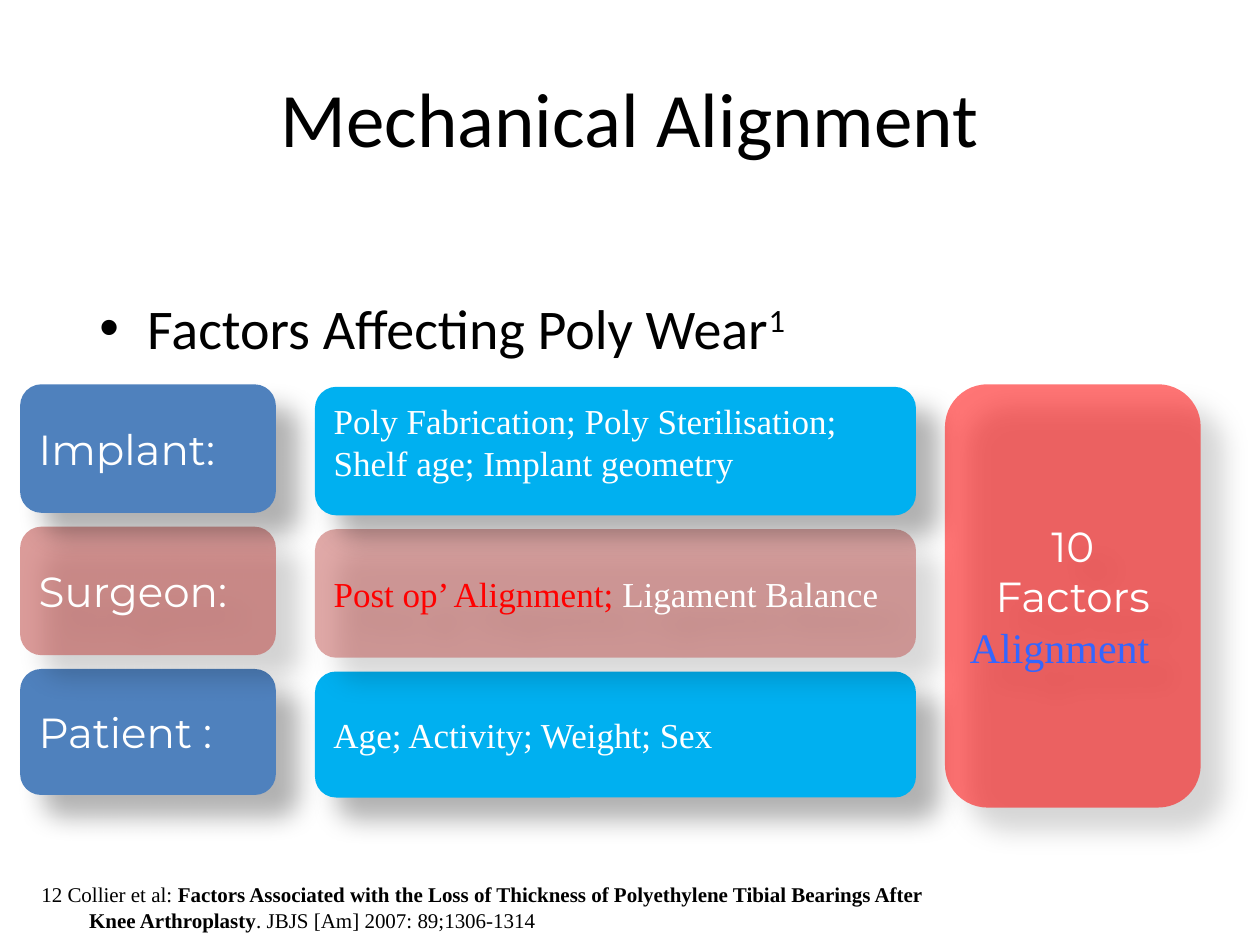
from lxml import etree
from pptx import Presentation
from pptx.dml.color import RGBColor
from pptx.enum.shapes import MSO_SHAPE
from pptx.enum.text import MSO_ANCHOR, MSO_AUTO_SIZE, PP_ALIGN
from pptx.oxml.ns import qn
from pptx.util import Inches, Pt

ROUNDED = MSO_SHAPE.ROUNDED_RECTANGLE
TOP, MIDDLE = MSO_ANCHOR.TOP, MSO_ANCHOR.MIDDLE
LEFT, CENTER = PP_ALIGN.LEFT, PP_ALIGN.CENTER
GROW = MSO_AUTO_SIZE.SHAPE_TO_FIT_TEXT
COLORS = {
    "black": "000000", "white": "FFFFFF", "blue": "4F81BD", "brick": "C0504D",
    "cyan": "00B0F0", "red": "FF0000", "link_blue": "3366FF",
}
TITLE = {"name": "Calibri", "size": Pt(44)}
BODY = {"name": "Calibri", "size": Pt(32)}
NOTE = {"name": "Times New Roman", "size": Pt(12)}
LABEL = {"name": "Montserrat", "size": Pt(24)}
DETAIL = {"name": "Times New Roman", "size": Pt(20)}
ACCENT = {"name": "Times New Roman", "size": Pt(24)}

ROW_TOP, ROW_PITCH = 3.05, 1.13
LABEL_LEFT, LABEL_WIDTH = 0.16, 2.03
DETAIL_LEFT, DETAIL_WIDTH, DETAIL_DROP = 2.5, 4.77, 0.02
ROWS = [
    ("Implant:", [("Poly Fabrication; Poly Sterilisation; Shelf age; Implant geometry", "white")],
     1.02, ("blue", 100), ("cyan", 100), TOP),
    ("Surgeon:", [("Post op’ Alignment; ", "red"), ("Ligament Balance", "white")],
     1.02, ("brick", 57), ("brick", 49), MIDDLE),
    ("Patient :", [("Age; Activity; Weight; Sex", "white")],
     1, ("blue", 100), ("cyan", 100), MIDDLE),
]


def add_span(para, text, style, color="black"):
    span = para.add_run()
    span.text = text
    for name, value in style.items():
        setattr(span.font, name, value)
    span.font.color.rgb = RGBColor.from_string(COLORS[color])
    return span


def set_frame(shape, anchor):
    frame = shape.text_frame
    frame.word_wrap = True
    frame.vertical_anchor = anchor
    return frame


def add_text(page, area, anchor=TOP):
    box = page.shapes.add_textbox(*map(Inches, area))
    return set_frame(box, anchor)


def set_hanging(para, bullet=None):
    properties = para._p.get_or_add_pPr()
    properties.set("marL", str(Inches(0.38)))
    properties.set("indent", str(Inches(-0.38)))
    if bullet:
        font = etree.SubElement(properties, qn("a:buFont"))
        font.set("typeface", "Arial")
        etree.SubElement(properties, qn("a:buChar")).set("char", bullet)


def set_alpha(color, percent):
    etree.SubElement(color, qn("a:alpha")).set("val", str(percent * 1000))


def add_shadow(shape):
    shape.shadow.inherit = False
    effects = shape._element.spPr.find(qn("a:effectLst"))
    shadow = etree.SubElement(effects, qn("a:outerShdw"))
    values = {"blurRad": Pt(15), "dist": Pt(18), "dir": 45 * 60000,
              "algn": "tl", "rotWithShape": 0}
    for name, value in values.items():
        shadow.set(name, str(value))
    color = etree.SubElement(shadow, qn("a:srgbClr"))
    color.set("val", COLORS["black"])
    set_alpha(color, 30)


def add_card(page, area, fill, anchor=MIDDLE):
    card = page.shapes.add_shape(ROUNDED, *map(Inches, area))
    color, opacity = fill
    card.fill.solid()
    card.fill.fore_color.rgb = RGBColor.from_string(COLORS[color])
    if opacity < 100:
        set_alpha(card._element.spPr.find(qn("a:solidFill"))[0], opacity)
    card.line.fill.background()
    add_shadow(card)
    frame = set_frame(card, anchor)
    frame.paragraphs[0].alignment = LEFT
    return frame


def add_headings(page):
    title = add_text(page, (0.5, 0.3, 9, 1.25), MIDDLE).paragraphs[0]
    title.alignment = CENTER
    add_span(title, "Mechanical Alignment", TITLE)
    body = add_text(page, (0.69, 2.28, 8.79, 4.59)).paragraphs[0]
    set_hanging(body, "•")
    add_span(body, "Factors Affecting Poly Wear", BODY)
    mark = add_span(body, "1", BODY)
    mark._r.get_or_add_rPr().set("baseline", "30000")


def add_reference(page):
    frame = add_text(page, (0.23, 6.95, 7.5, 0.71))
    frame.auto_size = GROW
    para = frame.paragraphs[0]
    set_hanging(para)
    add_span(para, "12 Collier et al: ", NOTE)
    add_span(para, "Factors Associated with the Loss of Thickness of Polyethylene "
             "Tibial Bearings After Knee Arthroplasty", {**NOTE, "bold": True})
    add_span(para, ". JBJS [Am] 2007: 89;1306-1314", NOTE)


def add_factor_rows(page):
    for index, (label, details, height, label_fill, detail_fill, anchor) in reversed(
            list(enumerate(ROWS))):
        top = ROW_TOP + index * ROW_PITCH
        frame = add_card(page, (LABEL_LEFT, top, LABEL_WIDTH, height), label_fill)
        add_span(frame.paragraphs[0], label, LABEL, "white")
        area = (DETAIL_LEFT, top + DETAIL_DROP, DETAIL_WIDTH, height)
        frame = add_card(page, area, detail_fill, anchor)
        for text, color in details:
            add_span(frame.paragraphs[0], text, DETAIL, color)


def add_summary(page):
    frame = add_card(page, (7.5, ROW_TOP, LABEL_WIDTH, 3.36), ("red", 54))
    count = frame.paragraphs[0]
    count.alignment = CENTER
    add_span(count, "10 Factors", LABEL, "white")
    factor = frame.add_paragraph()
    factor.alignment = LEFT
    add_span(factor, "Alignment", ACCENT, "link_blue")


def main():
    deck = Presentation()
    deck.slide_width, deck.slide_height = Inches(10), Inches(7.5)
    page = deck.slides.add_slide(deck.slide_layouts[6])
    add_headings(page)
    add_reference(page)
    add_factor_rows(page)
    add_summary(page)
    deck.save("out.pptx")


if __name__ == "__main__":
    main()
